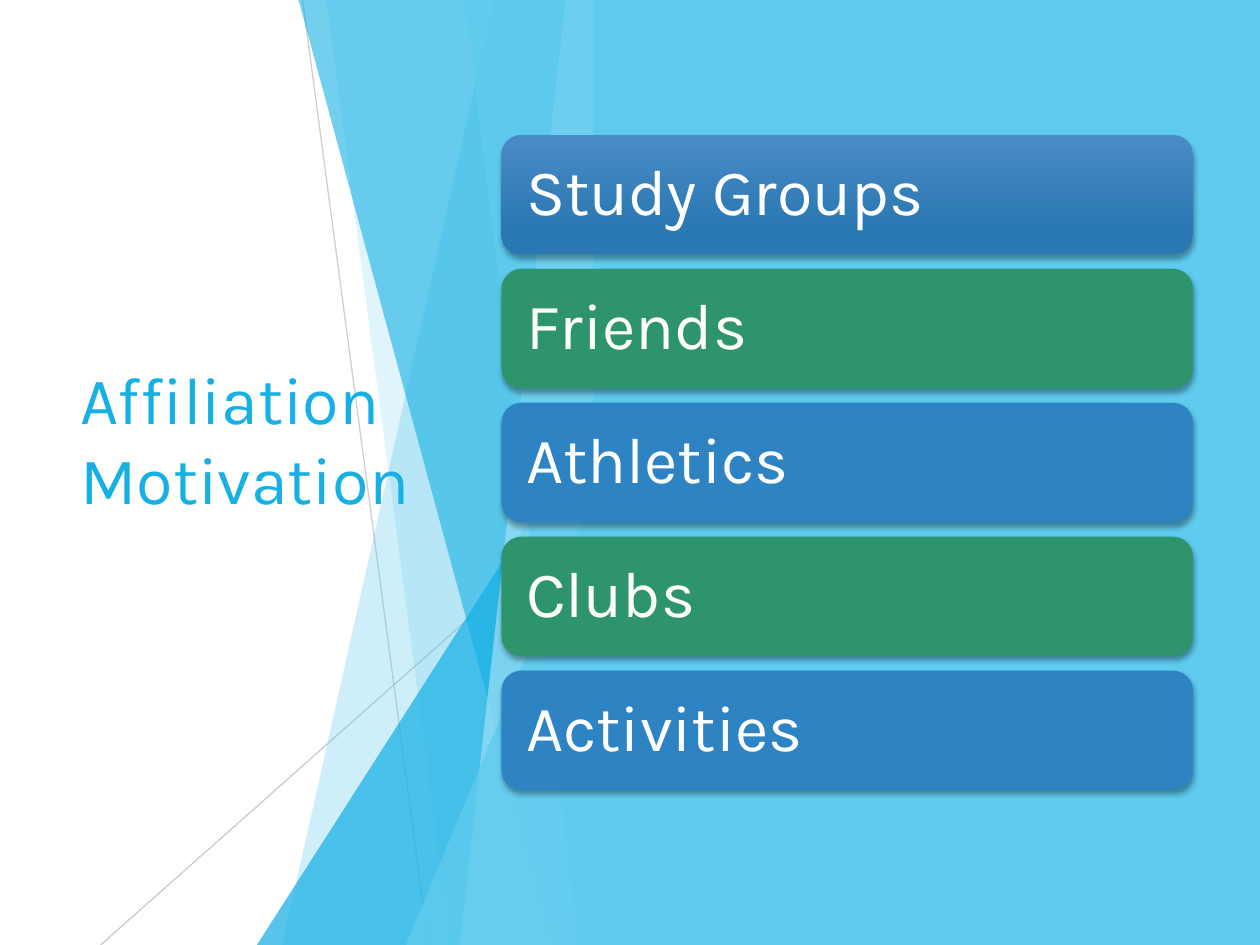
from dataclasses import dataclass

from lxml.etree import SubElement
from pptx import Presentation
from pptx.dml.color import RGBColor
from pptx.enum.shapes import MSO_CONNECTOR, MSO_SHAPE
from pptx.enum.text import MSO_ANCHOR, PP_ALIGN
from pptx.oxml.ns import qn
from pptx.util import Cm, Pt


@dataclass(frozen=True)
class Theme:
    font: str = "Karla"
    title_size: int = 38
    card_size: int = 37
    white: str = "FFFFFF"
    sky: str = "5FCBEF"
    pale_sky: str = "9FE0F5"
    cyan: str = "17B0E4"
    blue: str = "2E83C3"
    green: str = "2E946B"
    gradient_top: str = "4A8BC6"
    gradient_bottom: str = "2A78B2"
    line: str = "BFBFBF"
    shadow: str = "000000"


def write_text(shape, text, *, size, color, inset, spacing=1.0):
    frame = shape.text_frame
    frame.word_wrap = True
    frame.vertical_anchor = MSO_ANCHOR.MIDDLE
    frame.margin_left = frame.margin_right = inset
    frame.margin_top = frame.margin_bottom = inset
    paragraph = frame.paragraphs[0]
    paragraph.alignment = PP_ALIGN.LEFT
    paragraph.line_spacing = spacing
    run = paragraph.add_run()
    run.text = text
    run.font.name = theme.font
    run.font.size = Pt(size)
    run.font.color.rgb = RGBColor.from_string(color)


def set_opacity(shape, percent):
    color = shape.element.spPr.find(".//" + qn("a:srgbClr"))
    SubElement(color, qn("a:alpha"), val=str(percent * 1000))


theme = Theme()
presentation = Presentation()
presentation.slide_width = Cm(25.4)
presentation.slide_height = Cm(19.05)
slide = presentation.slides.add_slide(presentation.slide_layouts[6])
shapes = slide.shapes
bottom = 19.05
panel_right = 11.96

for start_x, start_y, end_x, opacity in [
    (6.1, 0, 8.64, 75),
    (panel_right, 10.24, 2.03, 80),
]:
    connector = shapes.add_connector(
        MSO_CONNECTOR.STRAIGHT, Cm(start_x), Cm(start_y), Cm(end_x), Cm(bottom)
    )
    connector.line.color.rgb = RGBColor.from_string(theme.line)
    connector.line.width = Pt(0.75)
    set_opacity(connector, opacity)
    SubElement(connector.element.spPr, qn("a:effectLst"))

facets = [
    ("panel", 9.96, 5.69, theme.sky, 30),
    ("panel", 6.58, 9.09, theme.sky, 20),
    ("triangle", 5.18, 8.46, theme.cyan, 72),
    ("panel", 6.02, 11.18, theme.cyan, 60),
    ("panel", 11.4, 9.27, theme.pale_sky, 70),
    ("panel", 9.37, 11.66, theme.sky, 65),
    ("triangle", 8.18, 9.98, theme.sky, 80),
]
for kind, first, second, color, opacity in facets:
    if kind == "panel":
        builder = shapes.build_freeform(Cm(first), 0)
        builder.add_line_segments([
            (Cm(panel_right), 0),
            (Cm(panel_right), Cm(bottom)),
            (Cm(second), Cm(bottom)),
        ])
        facet = builder.convert_to_shape()
    else:
        facet = shapes.add_shape(
            MSO_SHAPE.ISOSCELES_TRIANGLE, Cm(first), Cm(second),
            Cm(panel_right - first), Cm(bottom - second),
        )
        facet.adjustments[0] = 1
    facet.shadow.inherit = False
    facet.fill.solid()
    facet.fill.fore_color.rgb = RGBColor.from_string(color)
    facet.line.fill.background()
    set_opacity(facet, opacity)

title = shapes.add_textbox(Cm(1.37), Cm(3.84), Cm(7.39), Cm(9.98))
write_text(title, "Affiliation Motivation", size=theme.title_size,
           color=theme.cyan, inset=Cm(0.25))

backdrop = shapes.add_shape(
    MSO_SHAPE.RECTANGLE, Cm(panel_right), 0, Cm(25.4 - panel_right), Cm(bottom)
)
backdrop.shadow.inherit = False
backdrop.fill.solid()
backdrop.fill.fore_color.rgb = RGBColor.from_string(theme.sky)
backdrop.line.fill.background()

cards = [
    ("Study Groups", (theme.gradient_top, theme.gradient_bottom)),
    ("Friends", (theme.green,)),
    ("Athletics", (theme.blue,)),
    ("Clubs", (theme.green,)),
    ("Activities", (theme.blue,)),
]
for index, (label, colors) in enumerate(cards):
    card = shapes.add_shape(
        MSO_SHAPE.ROUNDED_RECTANGLE,
        Cm(10.11), Cm(2.72 + 2.7 * index), Cm(13.94), Cm(2.41),
    )
    if len(colors) == 2:
        card.fill.gradient()
        card.fill.gradient_angle = 270
        for stop, position, color in zip(card.fill.gradient_stops, (0, 0.78), colors):
            stop.position = position
            stop.color.rgb = RGBColor.from_string(color)
    else:
        card.fill.solid()
        card.fill.fore_color.rgb = RGBColor.from_string(colors[0])
    card.line.fill.background()
    card.shadow.inherit = False
    effects = card.element.spPr.find(qn("a:effectLst"))
    shadow = SubElement(effects, qn("a:outerShdw"), blurRad=str(Pt(3)),
                        dist=str(Pt(2)), dir="5400000", rotWithShape="0")
    shadow_color = SubElement(shadow, qn("a:srgbClr"), val=theme.shadow)
    SubElement(shadow_color, qn("a:alpha"), val="35000")
    write_text(card, label, size=theme.card_size, color=theme.white,
               inset=Cm(0.38), spacing=0.9)

presentation.save("out.pptx")
